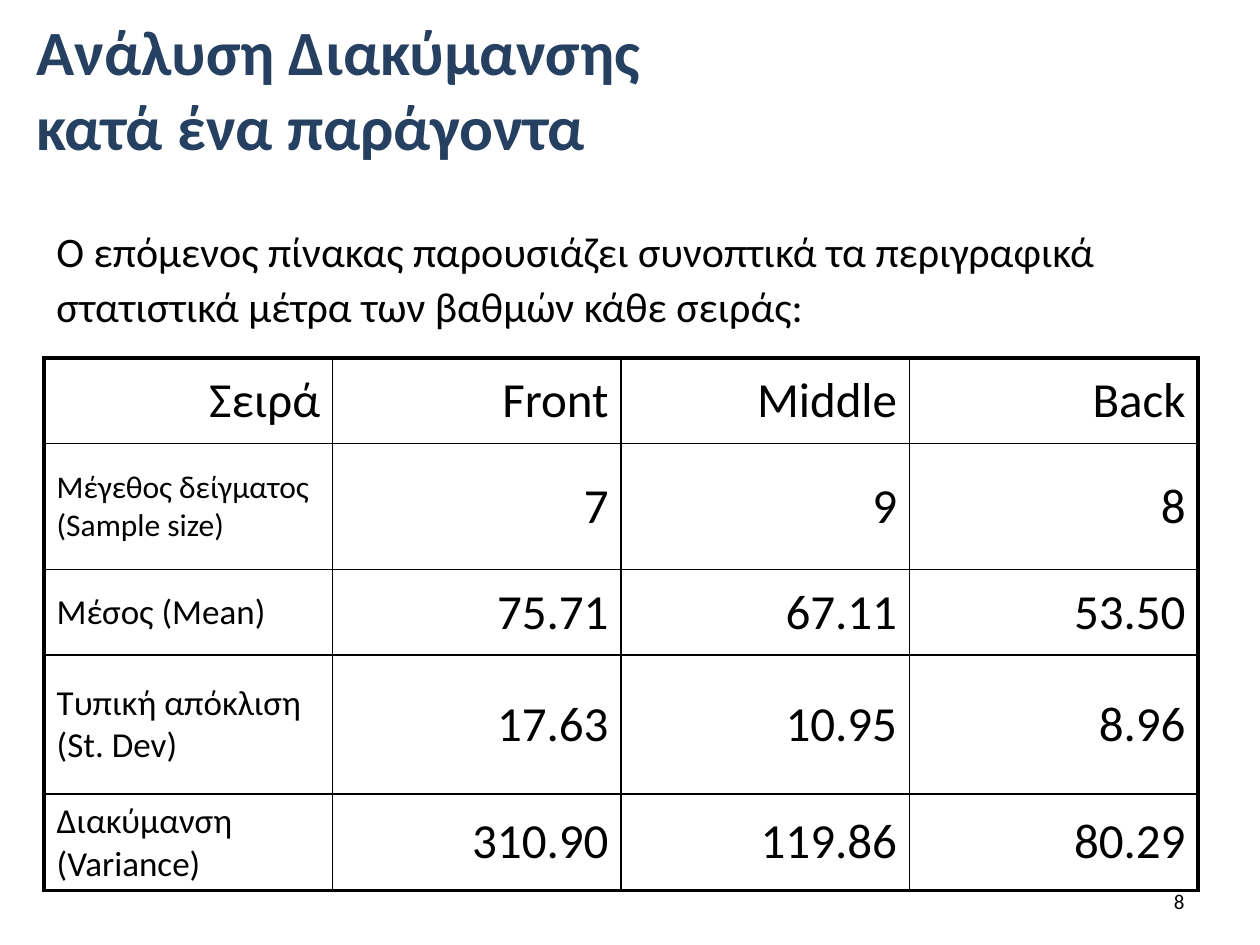
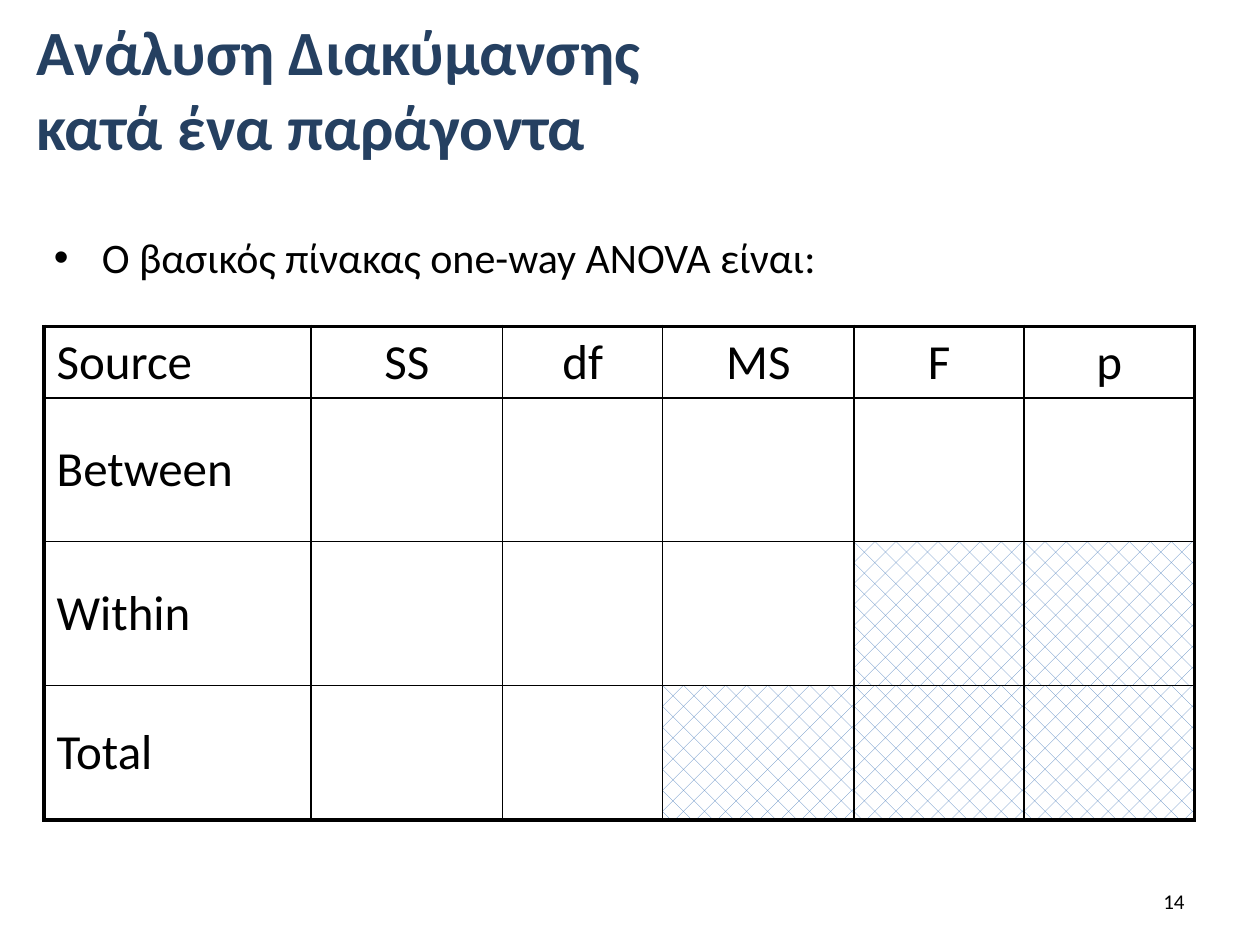
from lxml.etree import SubElement
from pptx import Presentation
from pptx.dml.color import RGBColor
from pptx.enum.dml import MSO_PATTERN
from pptx.enum.text import MSO_ANCHOR, PP_ALIGN
from pptx.oxml.ns import qn
from pptx.util import Inches, Pt

NAVY = RGBColor(0x25, 0x40, 0x61)
BLUE = RGBColor(0x4F, 0x81, 0xBD)
BLACK = RGBColor(0, 0, 0)
WHITE = RGBColor(0xFF, 0xFF, 0xFF)
FONT = "Calibri"
TITLE = "Ανάλυση Διακύμανσης\nκατά ένα παράγοντα"
THIN, THICK = 1, 2.25
TABLE_LEFT = 0.35

STATISTICS = [
    ["Σειρά", "Front", "Middle", "Back"],
    ["Μέγεθος δείγματος (Sample size)", "7", "9", "8"],
    ["Μέσος (Mean)", "75.71", "67.11", "53.50"],
    ["Τυπική απόκλιση (St. Dev)", "17.63", "10.95", "8.96"],
    ["Διακύμανση (Variance)", "310.90", "119.86", "80.29"],
]
STATISTICS_LABEL_SIZES = [28, 18, 20, 20, 20]
ANOVA = [
    ["Source", "SS", "df", "MS", "F", "p"],
    ["Between"] + [""] * 5,
    ["Within"] + [""] * 5,
    ["Total"] + [""] * 5,
]
ANOVA_FIRST_HATCHED = {2: 4, 3: 3}


class LectureDeck:
    """Holds the lecture style and the slide being filled."""

    def __init__(self):
        self.deck = Presentation()
        self.deck.slide_width = Inches(10)
        self.deck.slide_height = Inches(7.5)
        self.page = None

    def add_page(self, number):
        self.page = self.deck.slides.add_slide(self.deck.slide_layouts[6])
        title = self.text(TITLE, 0, 0, 10, 1.39, 36, color=NAVY, bold=True, anchor=MSO_ANCHOR.MIDDLE)
        self.indent(title, 0.19, 0)
        self.text(str(number), 7.17, 6.95, 2.33, 0.4, 12, align=PP_ALIGN.RIGHT, anchor=MSO_ANCHOR.MIDDLE)

    def style(self, paragraph, size, color=BLACK, bold=False, align=PP_ALIGN.LEFT):
        paragraph.alignment = align
        font = paragraph.font
        font.name, font.size, font.bold = FONT, Pt(size), bold
        font.color.rgb = color

    def indent(self, paragraph, margin, first_line):
        properties = paragraph._p.get_or_add_pPr()
        properties.set("marL", str(Inches(margin)))
        properties.set("indent", str(Inches(first_line)))

    def text(self, words, left, top, width, height, size, anchor=MSO_ANCHOR.TOP, bullet=False, **look):
        box = self.page.shapes.add_textbox(Inches(left), Inches(top), Inches(width), Inches(height))
        frame = box.text_frame
        frame.word_wrap = True
        frame.vertical_anchor = anchor
        para = frame.paragraphs[0]
        para.text = words
        if bullet:
            self.indent(para, 0.38, -0.38)
            properties = para._p.get_or_add_pPr()
            SubElement(properties, qn("a:buFont"), typeface="Arial")
            SubElement(properties, qn("a:buChar"), char="•")
        self.style(para, size, **look)
        return para

    def body(self, words, left, top, height, bullet=False):
        para = self.text(words, left, top, 9, height, 24, bullet=bullet)
        para.line_spacing = 1.1
        para.space_before = Pt(12)

    def borders(self, cell, **widths):
        properties = cell._tc.get_or_add_tcPr()
        for side, width in widths.items():
            line = SubElement(properties, qn(f"a:ln{side}"), w=str(Pt(width)))
            fill = SubElement(line, qn("a:solidFill"))
            SubElement(fill, qn("a:srgbClr"), val=str(BLACK))

    def table(self, rows, top, widths, heights, align, label_sizes=None, first_hatched=None):
        """Draw a framed grid; each label size belongs to one row's first cell."""
        last_row, last_column = len(rows) - 1, len(widths) - 1
        frame = self.page.shapes.add_table(
            len(rows), len(widths), Inches(TABLE_LEFT), Inches(top), Inches(sum(widths)), Inches(sum(heights)))
        table = frame.table
        table.first_row = table.horz_banding = False
        for column, width in zip(table.columns, widths):
            column.width = Inches(width)
        for row, height in zip(table.rows, heights):
            row.height = Inches(height)
        for r, row in enumerate(rows):
            hatch_start = (first_hatched or {}).get(r, len(row))
            for c, words in enumerate(row):
                cell = table.cell(r, c)
                self.borders(
                    cell,
                    L=THICK if c == 0 else THIN,
                    R=THICK if c == last_column else THIN,
                    T=THICK if r == 0 else THIN,
                    B=THICK if r == last_row else THIN,
                )
                self.fill(cell, hatched=c >= hatch_start)
                cell.vertical_anchor = MSO_ANCHOR.MIDDLE
                size = label_sizes[r] if label_sizes and c == 0 else 28
                para = cell.text_frame.paragraphs[0]
                para.text = words
                para.space_before = Pt(size * 0.2)
                self.style(para, size, align=align(r, c))

    def fill(self, cell, hatched):
        if hatched:
            cell.fill.patterned()
            cell.fill.pattern = MSO_PATTERN.DIAGONAL_BRICK
            cell.fill.fore_color.rgb = BLUE
            cell.fill.back_color.rgb = WHITE
        else:
            cell.fill.solid()
            cell.fill.fore_color.rgb = WHITE


def statistics_align(row, column):
    return PP_ALIGN.LEFT if row and column == 0 else PP_ALIGN.RIGHT


def anova_align(row, column):
    return PP_ALIGN.CENTER if column else PP_ALIGN.LEFT


def main():
    lecture = LectureDeck()

    lecture.add_page(8)
    lecture.table(STATISTICS, 2.84, [2.29] * 4, [0.68, 1, 0.68, 1.1, 0.77],
                  statistics_align, label_sizes=STATISTICS_LABEL_SIZES)
    lecture.body("Ο επόμενος πίνακας παρουσιάζει συνοπτικά τα περιγραφικά "
                 "στατιστικά μέτρα των βαθμών κάθε σειράς:", 0.35, 1.7, 1.33)

    lecture.add_page(14)
    lecture.table(ANOVA, 2.59, [2.12, 1.52, 1.27, 1.52, 1.35, 1.35], [0.57, 1.14, 1.14, 1.07],
                  anova_align, first_hatched=ANOVA_FIRST_HATCHED)
    lecture.body("Ο βασικός πίνακας one-way ANOVA είναι:", 0.33, 1.75, 0.75, bullet=True)

    lecture.deck.save("out.pptx")


if __name__ == "__main__":
    main()
